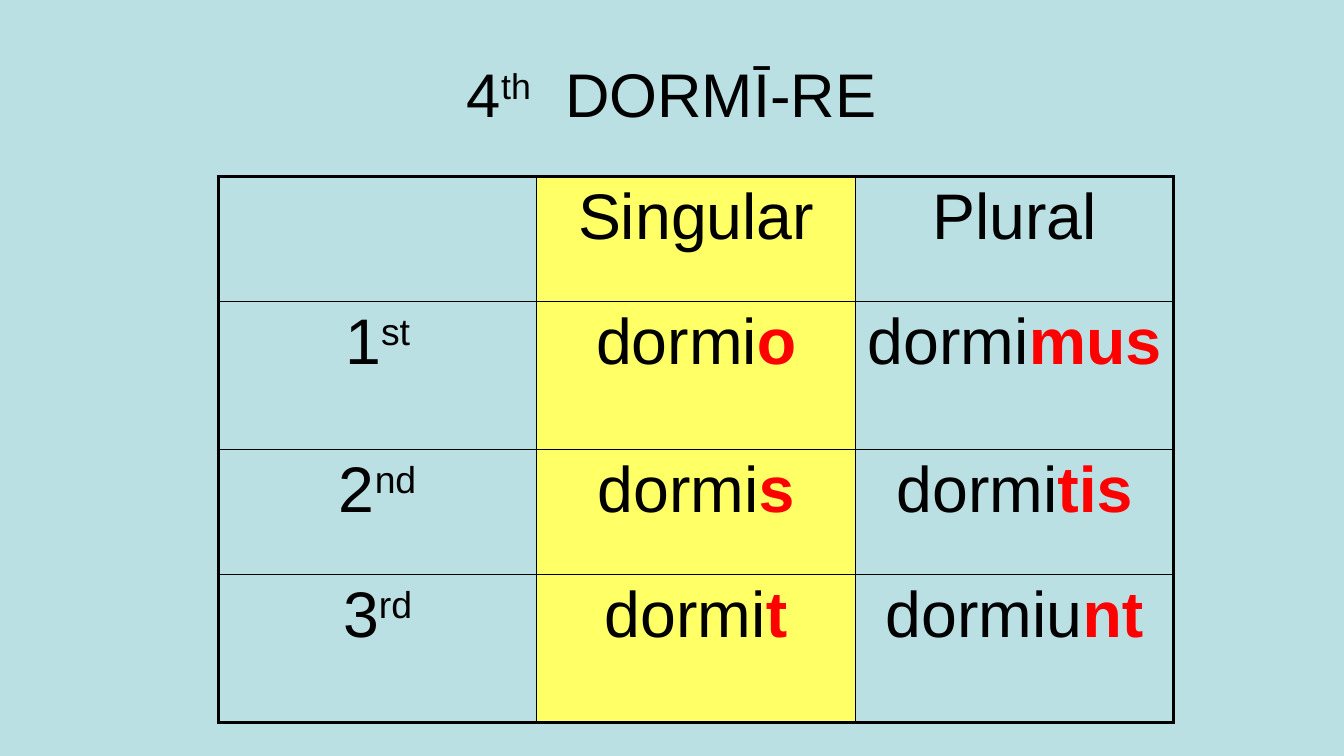
from lxml import etree
from pptx import Presentation
from pptx.dml.color import RGBColor
from pptx.enum.text import MSO_ANCHOR, PP_ALIGN
from pptx.oxml.ns import qn
from pptx.util import Pt

CENTER = PP_ALIGN.CENTER
MIDDLE = MSO_ANCHOR.MIDDLE
TOP = MSO_ANCHOR.TOP
TITLE_ONLY = 5

# Content: each text is a list of (words, style) spans
TITLE = [("4", ""), ("th", "raised"), ("  DORMĪ-RE", "")]
ROWS = [
    [[], [("Singular", "")], [("Plural", "")]],
    [[("1", ""), ("st", "raised")],
     [("dormi", ""), ("o", "ending")],
     [("dormi", ""), ("mus", "ending")]],
    [[("2", ""), ("nd", "raised")],
     [("dormi", ""), ("s", "ending")],
     [("dormi", ""), ("tis", "ending")]],
    [[("3", ""), ("rd", "raised")],
     [("dormi", ""), ("t", "ending")],
     [("dormiu", ""), ("nt", "ending")]],
]

COLORS = {"page": "BBE0E3", "text": "000000", "ending": "FF0000",
          "singular": "FFFF66"}
FONT = "Arial"
TITLE_SIZE, TABLE_SIZE = 44, 46
TITLE_BOX = (48, 21.6, 864, 90)
TABLE_LEFT, TABLE_TOP = 156, 126
COLUMN_WIDTH = 227.5
ROW_HEIGHTS = [89.25, 105.75, 89.25, 105.75]
SINGULAR_COLUMN = 1
INNER_LINE, OUTER_LINE = 1, 2.25


def color(name):
    return RGBColor.from_string(COLORS[name])


def write(frame, spans, size):
    para = frame.paragraphs[0]
    para.alignment = CENTER
    para.font.name = FONT
    para.font.size = Pt(size)
    para.font.color.rgb = color("text")
    for words, style in spans:
        span = para.add_run()
        span.text = words
        if style == "raised":
            span._r.get_or_add_rPr().set("baseline", "30000")
        elif style == "ending":
            span.font.bold = True
            span.font.color.rgb = color("ending")


def add_border(cell, side, width):
    properties = cell._tc.get_or_add_tcPr()
    line = etree.SubElement(properties, qn(f"a:ln{side}"), w=str(Pt(width)))
    fill = etree.SubElement(line, qn("a:solidFill"))
    etree.SubElement(fill, qn("a:srgbClr"), val=COLORS["text"])


# Page
deck = Presentation()
deck.slide_width, deck.slide_height = Pt(960), Pt(540)
page = deck.slides.add_slide(deck.slide_layouts[TITLE_ONLY])
page.background.fill.solid()
page.background.fill.fore_color.rgb = color("page")

# Title
title = page.shapes.title
title.left, title.top, title.width, title.height = map(Pt, TITLE_BOX)
title.text_frame.vertical_anchor = MIDDLE
write(title.text_frame, TITLE, TITLE_SIZE)

# Conjugation table
row_count, column_count = len(ROWS), len(ROWS[0])
table = page.shapes.add_table(
    row_count, column_count, Pt(TABLE_LEFT), Pt(TABLE_TOP),
    Pt(COLUMN_WIDTH * column_count), Pt(sum(ROW_HEIGHTS))).table
table.first_row = False
table.horz_banding = False
for column in table.columns:
    column.width = Pt(COLUMN_WIDTH)

for r, texts in enumerate(ROWS):
    table.rows[r].height = Pt(ROW_HEIGHTS[r])
    for c, spans in enumerate(texts):
        cell = table.cell(r, c)
        cell.vertical_anchor = TOP
        write(cell.text_frame, spans, TABLE_SIZE)

        # Heavy lines on the outer edge; borders precede the fill
        outer_sides = {"L": c == 0, "R": c == column_count - 1,
                       "T": r == 0, "B": r == row_count - 1}
        for side, is_outer in outer_sides.items():
            add_border(cell, side, OUTER_LINE if is_outer else INNER_LINE)

        if c == SINGULAR_COLUMN:
            cell.fill.solid()
            cell.fill.fore_color.rgb = color("singular")
        else:
            cell.fill.background()

deck.save("out.pptx")
